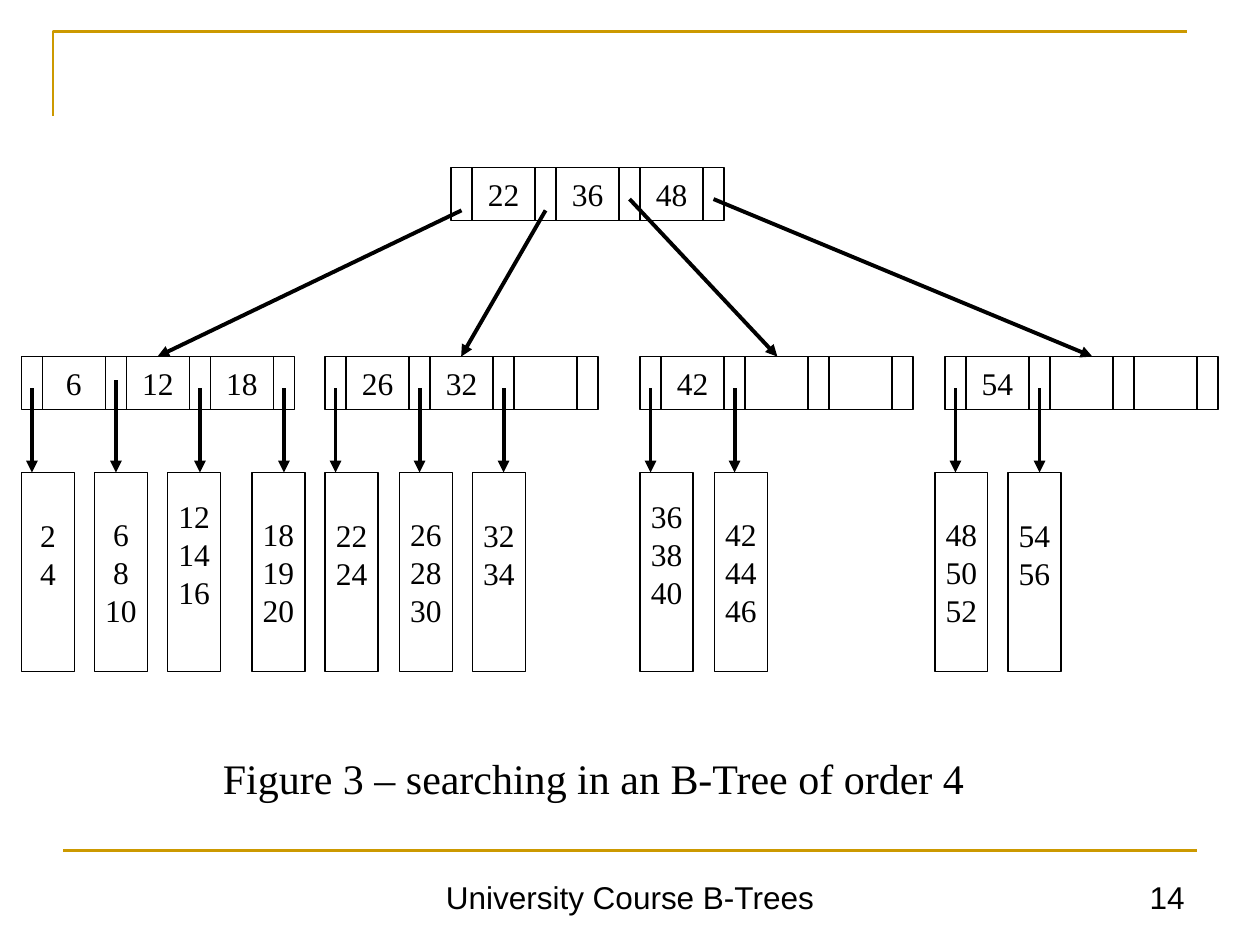
from dataclasses import dataclass

from lxml import etree
from pptx import Presentation
from pptx.dml.color import RGBColor
from pptx.enum.shapes import MSO_CONNECTOR, MSO_SHAPE
from pptx.enum.text import MSO_ANCHOR, PP_ALIGN
from pptx.oxml.ns import qn
from pptx.util import Inches, Pt

RECTANGLE, STRAIGHT = MSO_SHAPE.RECTANGLE, MSO_CONNECTOR.STRAIGHT
TOP, MIDDLE, BOTTOM = MSO_ANCHOR.TOP, MSO_ANCHOR.MIDDLE, MSO_ANCHOR.BOTTOM
CENTER, RIGHT = PP_ALIGN.CENTER, PP_ALIGN.RIGHT


@dataclass(frozen=True)
class Theme:
    ink: RGBColor = RGBColor(0, 0, 0)
    gold: RGBColor = RGBColor(0xCC, 0x99, 0x00)
    tree_font: str = "Times New Roman"
    footer_font: str = "Arial"
    text_size: int = 18
    caption_size: int = 24
    box_line: float = 0.75
    rule_line: float = 1.5
    arrow_line: float = 2.25


@dataclass(frozen=True)
class Leaf:
    left: float
    keys: tuple
    raised: bool = False  # a free line is kept below the keys
    arrow_top: float = 3.08


@dataclass(frozen=True)
class Node:
    left: float
    keys: tuple
    arrow_top: float  # start of the arrow from the root
    arrow_end: float
    leaves: tuple


THEME = Theme()

# Node geometry: pointer and key cells alternate
POINTER_WIDTH, KEY_WIDTH = 1 / 6, 1 / 2
PITCH = POINTER_WIDTH + KEY_WIDTH
KEYS_PER_NODE = 3
CELL_HEIGHT = 0.42
ROOT_TOP, NODE_TOP, LEAF_TOP = 1.33, 2.83, 3.75
LEAF_WIDTH, LEAF_HEIGHT = 0.42, 1.58
FREE_LINE = 0.29

ROOT_LEFT, ROOT_KEYS = 3.58, (22, 36, 48)
NODES = (
    Node(0.17, (6, 12, 18), 1.67, 1.25, (
        Leaf(0.17, (2, 4), raised=True),
        Leaf(0.75, (6, 8, 10), arrow_top=3.02),
        Leaf(1.33, (12, 14, 16), raised=True),
        Leaf(2, (18, 19, 20)))),
    Node(2.58, (26, 32), 1.67, 3.66, (
        Leaf(2.58, (22, 24), raised=True),
        Leaf(3.17, (26, 28, 30)),
        Leaf(3.75, (32, 34), raised=True))),
    Node(5.08, (42,), 1.58, 6.17, (
        Leaf(5.08, (36, 38, 40), raised=True),
        Leaf(5.67, (42, 44, 46)))),
    Node(7.5, (54,), 1.58, 8.67, (
        Leaf(7.42, (48, 50, 52)),
        Leaf(8, (54, 56), raised=True))),
)


def write(frame, lines, font_name, size, align, anchor):
    frame.vertical_anchor = anchor
    frame.text = "\n".join(str(line) for line in lines)
    for paragraph in frame.paragraphs:
        paragraph.alignment = align
        paragraph.font.name = font_name
        paragraph.font.size = Pt(size)
        paragraph.font.color.rgb = THEME.ink


def add_box(slide, left, top, width, height, keys=(), free_space=0):
    box = slide.shapes.add_shape(
        RECTANGLE, Inches(left), Inches(top), Inches(width), Inches(height))
    box.shadow.inherit = False
    box.fill.background()
    box.line.color.rgb = THEME.ink
    box.line.width = Pt(THEME.box_line)
    if keys:
        write(box.text_frame, keys, THEME.tree_font, THEME.text_size, CENTER, MIDDLE)
        box.text_frame.word_wrap = False
        box.text_frame.margin_bottom = Inches(0.05 + free_space)


def add_line(slide, start, end, color, width, arrow=False):
    line = slide.shapes.add_connector(
        STRAIGHT, *(Inches(value) for value in (*start, *end)))
    line.line.color.rgb = color
    line.line.width = Pt(width)
    if arrow:
        etree.SubElement(line.line._get_or_add_ln(), qn("a:tailEnd"), type="triangle")
    etree.SubElement(line._element.spPr, qn("a:effectLst"))


def add_arrow(slide, start, end):
    add_line(slide, start, end, THEME.ink, THEME.arrow_line, arrow=True)


def add_text(slide, text, left, top, width, height, font_name, size,
             align=CENTER, anchor=BOTTOM):
    label = slide.shapes.add_textbox(
        Inches(left), Inches(top), Inches(width), Inches(height))
    label.text_frame.word_wrap = True
    write(label.text_frame, [text], font_name, size, align, anchor)
    return label


def pointer_center(node_left, index):
    return node_left + index * PITCH + POINTER_WIDTH / 2


def add_node(slide, left, top, keys):
    for index in range(KEYS_PER_NODE):
        cell_left = left + index * PITCH
        add_box(slide, cell_left + POINTER_WIDTH, top, KEY_WIDTH, CELL_HEIGHT,
                keys[index:index + 1])
        add_box(slide, cell_left, top, POINTER_WIDTH, CELL_HEIGHT)
    add_box(slide, left + KEYS_PER_NODE * PITCH, top, POINTER_WIDTH, CELL_HEIGHT)


def add_frame(slide):
    builder = slide.shapes.build_freeform(Inches(0.42), Inches(0.92))
    builder.add_line_segments(
        [(Inches(0.42), Inches(0.25)), (Inches(9.42), Inches(0.25))], close=False)
    corner = builder.convert_to_shape()
    corner.shadow.inherit = False
    corner.fill.background()
    corner.line.color.rgb = THEME.gold
    corner.line.width = Pt(THEME.rule_line)
    add_line(slide, (0.5, 6.75), (9.5, 6.75), THEME.gold, THEME.rule_line)


def add_tree(slide):
    # Nodes and leaves
    add_node(slide, ROOT_LEFT, ROOT_TOP, ROOT_KEYS)
    for node in NODES:
        add_node(slide, node.left, NODE_TOP, node.keys)
        for leaf in node.leaves:
            add_box(slide, leaf.left, LEAF_TOP, LEAF_WIDTH, LEAF_HEIGHT, leaf.keys,
                    FREE_LINE if leaf.raised else 0)

    # Arrows lie above all cells
    for child, node in enumerate(NODES):
        add_arrow(slide, (pointer_center(ROOT_LEFT, child), node.arrow_top),
                  (node.arrow_end, NODE_TOP))
        for index, leaf in enumerate(node.leaves):
            x = pointer_center(node.left, index)
            add_arrow(slide, (x, leaf.arrow_top), (x, LEAF_TOP))


def main():
    deck = Presentation()
    deck.slide_width, deck.slide_height = Inches(10), Inches(7.5)
    slide = deck.slides.add_slide(deck.slide_layouts[6])

    # Frame and footer
    add_frame(slide)
    add_text(slide, "University Course B-Trees", 1.75, 6.83, 6.5, 0.49,
             THEME.footer_font, THEME.text_size)
    add_text(slide, "14", 7.17, 6.83, 2.33, 0.49,
             THEME.footer_font, THEME.text_size, align=RIGHT)

    # Tree and caption
    add_tree(slide)
    caption = add_text(slide, "Figure 3 – searching in an B-Tree of order 4",
                       0.5, 5.92, 8.42, 0.51,
                       THEME.tree_font, THEME.caption_size, anchor=TOP)
    caption.text_frame.paragraphs[0].space_before = Pt(15)

    deck.save("out.pptx")


if __name__ == "__main__":
    main()
